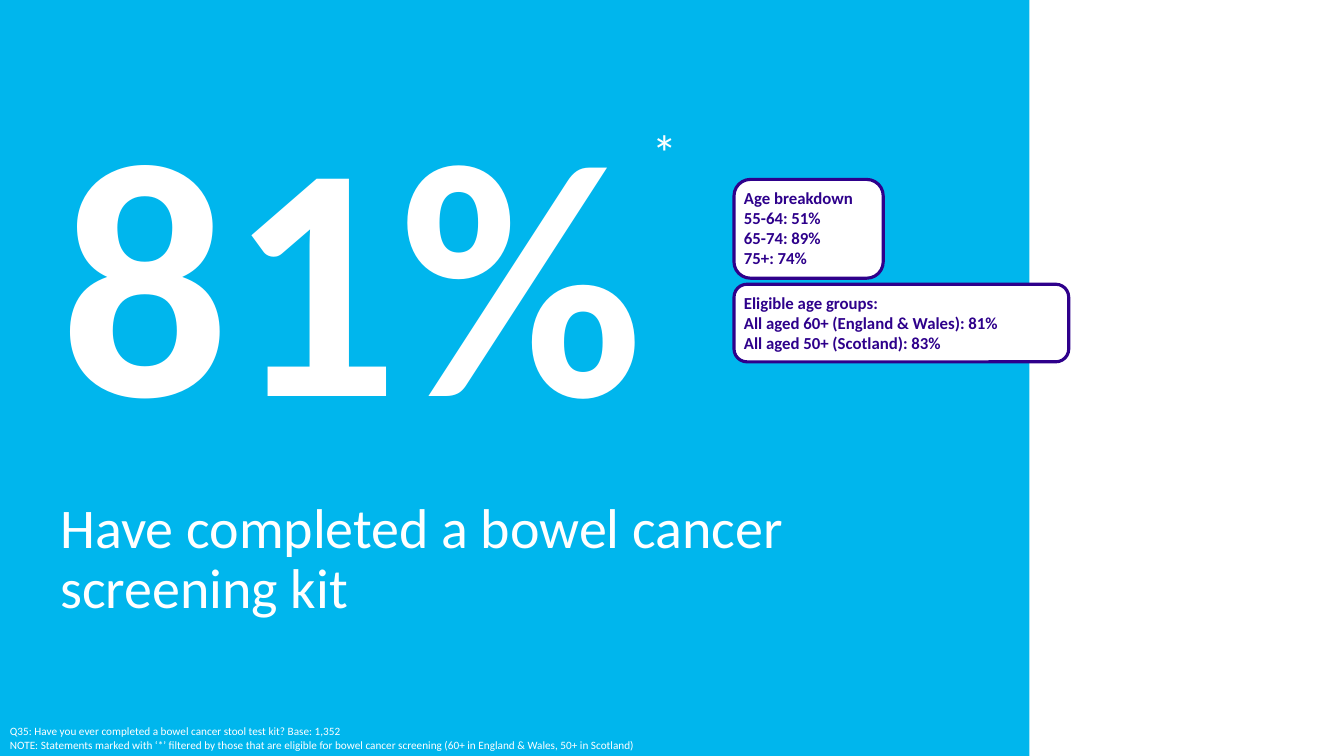
from dataclasses import dataclass

from pptx import Presentation
from pptx.dml.color import RGBColor
from pptx.enum.shapes import MSO_SHAPE
from pptx.enum.text import MSO_ANCHOR, PP_ALIGN
from pptx.slide import Slide
from pptx.util import Inches, Pt

WHITE = "FFFFFF"
SKY = "00B6ED"
PURPLE = "2E008B"


@dataclass(frozen=True)
class Area:
    left: float
    top: float
    width: float
    height: float


@dataclass(frozen=True)
class Line:
    text: str
    size: float
    color: str = WHITE
    bold: bool = False
    align: PP_ALIGN = PP_ALIGN.LEFT
    spacing: float = 1.0
    before: float = 0


@dataclass(frozen=True)
class Panel:
    area: Area
    shape: MSO_SHAPE
    fill: str
    outline: str | None = None


@dataclass(frozen=True)
class TextBlock:
    area: Area
    lines: list[Line]
    inset: bool = True


def color_of(value: str) -> RGBColor:
    return RGBColor.from_string(value)


def inches_of(area: Area) -> list[int]:
    return [Inches(value) for value in (area.left, area.top, area.width, area.height)]


def apply_format(target: object, values: dict) -> None:
    for name, value in values.items():
        setattr(target, name, value)


def draw_panel(page: Slide, panel: Panel) -> None:
    shape = page.shapes.add_shape(panel.shape, *inches_of(panel.area))
    shape.shadow.inherit = False
    shape.fill.solid()
    shape.fill.fore_color.rgb = color_of(panel.fill)
    if panel.outline is None:
        shape.line.fill.background()
    else:
        shape.line.color.rgb = color_of(panel.outline)
        shape.line.width = Pt(2.25)


def draw_text(page: Slide, block: TextBlock) -> None:
    box = page.shapes.add_textbox(*inches_of(block.area))
    frame = box.text_frame
    apply_format(frame, {"word_wrap": True, "vertical_anchor": MSO_ANCHOR.TOP})
    if not block.inset:
        sides = ("left", "top", "right", "bottom")
        apply_format(frame, {f"margin_{side}": 0 for side in sides})
    for index, line in enumerate(block.lines):
        para = frame.paragraphs[0] if index == 0 else frame.add_paragraph()
        apply_format(para, {
            "alignment": line.align,
            "line_spacing": line.spacing,
            "space_before": Pt(line.before),
        })
        span = para.add_run()
        span.text = line.text
        apply_format(span.font, {"name": "Calibri", "size": Pt(line.size), "bold": line.bold})
        span.font.color.rgb = color_of(line.color)


def card_lines(*texts: str) -> list[Line]:
    return [Line(text, 12, PURPLE, bold=True) for text in texts]


PANELS = [
    Panel(Area(0, 0, 10.21, 7.5), MSO_SHAPE.RECTANGLE, SKY),
    Panel(Area(7.28, 1.78, 1.48, 0.98), MSO_SHAPE.ROUNDED_RECTANGLE, WHITE, PURPLE),
    Panel(Area(7.28, 2.82, 3.32, 0.77), MSO_SHAPE.ROUNDED_RECTANGLE, WHITE, PURPLE),
]

TEXT_BLOCKS = [
    TextBlock(
        Area(0.6, 1.07, 7.4, 5.74),
        [
            Line("81%", 239, bold=True, spacing=0.9),
            Line("Have completed a bowel cancer screening kit", 40, spacing=0.9, before=22),
        ],
        inset=False,
    ),
    TextBlock(Area(6.12, 1.15, 0.94, 0.71), [Line("*", 36, align=PP_ALIGN.CENTER)]),
    TextBlock(
        Area(0, 7.14, 8.65, 0.37),
        [
            Line("Q35: Have you ever completed a bowel cancer stool test kit? Base: 1,352", 8),
            Line(
                "NOTE: Statements marked with ‘*’ filtered by those that are eligible for "
                "bowel cancer screening (60+ in England & Wales, 50+ in Scotland)",
                8,
            ),
        ],
    ),
    TextBlock(
        Area(7.28, 1.81, 1.59, 0.91),
        card_lines("Age breakdown", "55-64: 51%", "65-74: 89%", "75+: 74%"),
    ),
    TextBlock(
        Area(7.28, 2.85, 4.27, 0.71),
        card_lines(
            "Eligible age groups:",
            "All aged 60+ (England & Wales): 81%",
            "All aged 50+ (Scotland): 83%",
        ),
    ),
]


def main() -> None:
    deck = Presentation()
    apply_format(deck, {"slide_width": Inches(13.33), "slide_height": Inches(7.5)})
    page = deck.slides.add_slide(deck.slide_layouts[6])
    for panel in PANELS:
        draw_panel(page, panel)
    for block in TEXT_BLOCKS:
        draw_text(page, block)
    deck.save("out.pptx")


if __name__ == "__main__":
    main()
